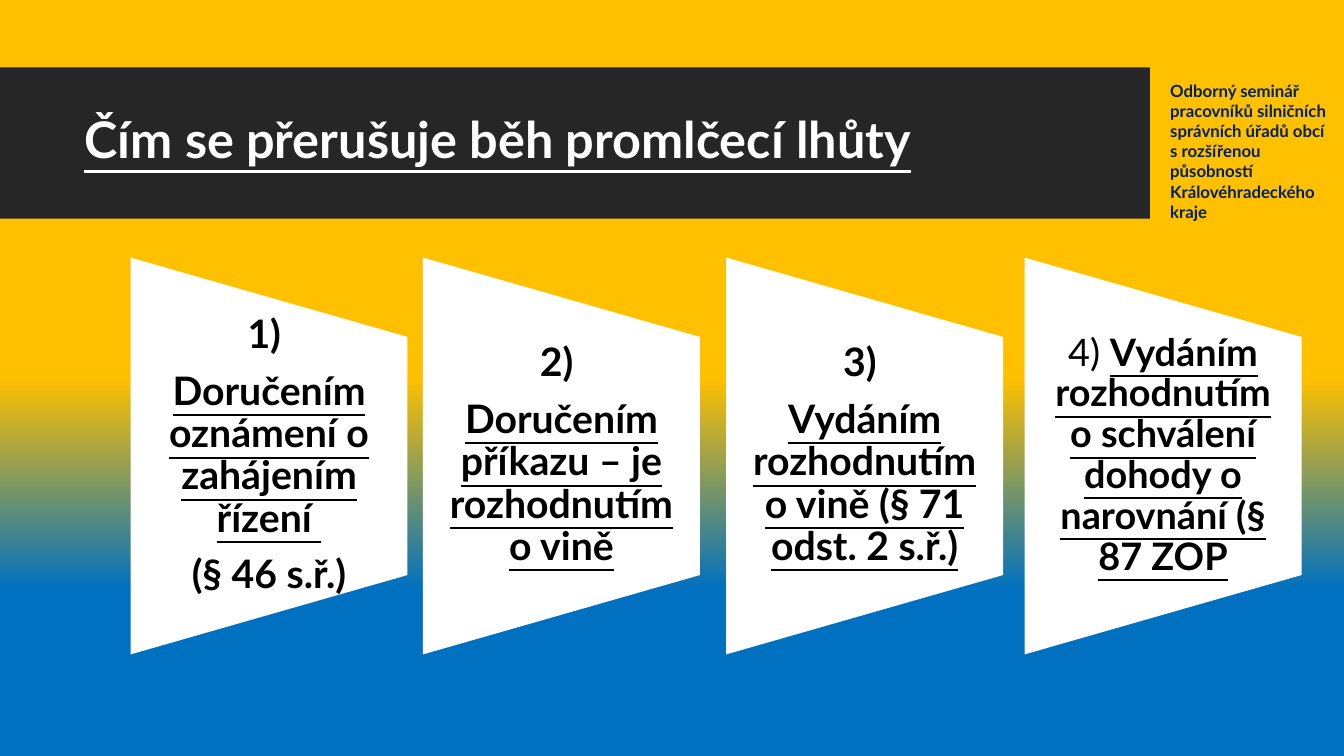
from dataclasses import dataclass

from pptx import Presentation
from pptx import util as u
from pptx.dml.color import RGBColor
from pptx.enum import shapes, text

HUES = {"gold": "FFC000", "blue": "0070C0", "dark": "262626",
        "white": "FFFFFF", "black": "000000", "navy": "002060"}
FACE = "Lato"
MID = 11.49
LONG, WIDE, TALL = 10.0, 6.98, 6.0


@dataclass
class Part:
    text: str
    bold: bool = True
    under: bool = False


@dataclass
class Card:
    mid: float
    size: int
    paras: list[list[Part]]


CARDS = [
    Card(6.78, 28, [[Part("1) ")],
                    [Part("Doručením oznámení o zahájením řízení ", under=True)],
                    [Part("(§ 46 s.ř.)")]]),
    Card(14.15, 28, [[Part("2) ")],
                     [Part("Doručením příkazu – je rozhodnutím o vině", under=True)]]),
    Card(21.79, 28, [[Part("3) ")],
                     [Part("Vydáním rozhodnutím o vině (§ 71 odst. 2 s.ř.)", under=True)]]),
    Card(29.31, 27, [[Part("4) ", bold=False),
                      Part("Vydáním rozhodnutím o schválení dohody o narovnání (§ 87 ZOP",
                           under=True)]]),
]


def tint(name: str) -> RGBColor:
    return RGBColor.from_string(HUES[name])


def style(font, size: int, hue: str, part: Part) -> None:
    font.name = FACE
    font.size = u.Pt(size)
    font.color.rgb = tint(hue)
    font.bold = part.bold
    font.underline = part.under


def block(slide, kind, x: float, y: float, w: float, h: float, hue: str):
    shape = slide.shapes.add_shape(kind, u.Cm(x), u.Cm(y), u.Cm(w), u.Cm(h))
    shape.shadow.inherit = False
    shape.fill.solid()
    shape.fill.fore_color.rgb = tint(hue)
    shape.line.fill.background()
    return shape


def label(slide, x: float, y: float, w: float, h: float):
    frame = slide.shapes.add_textbox(u.Cm(x), u.Cm(y), u.Cm(w), u.Cm(h)).text_frame
    frame.word_wrap = True
    frame.vertical_anchor = text.MSO_ANCHOR.MIDDLE
    return frame


def fill_para(para, parts: list[Part], size: int, hue: str) -> None:
    for part in parts:
        run = para.add_run()
        run.text = part.text
        if len(parts) > 1:
            style(run.font, size, hue, part)
    if len(parts) == 1:
        style(para.font, size, hue, parts[0])


def draw_card(slide, card: Card) -> None:
    shape = block(slide, shapes.MSO_SHAPE.FLOWCHART_MANUAL_OPERATION,
                  card.mid - LONG / 2, MID - WIDE / 2, LONG, WIDE, "white")
    shape.rotation = 270
    frame = label(slide, card.mid - WIDE / 2, MID - TALL / 2, WIDE, TALL)
    frame.margin_left = frame.margin_right = u.Cm(0.48)
    frame.margin_top = frame.margin_bottom = 0
    for i, parts in enumerate(card.paras):
        para = frame.add_paragraph() if i else frame.paragraphs[0]
        para.alignment = text.PP_ALIGN.CENTER
        para.line_spacing = 0.9
        para.space_after = u.Pt(10)
        fill_para(para, parts, card.size, "black")


def draw_back(slide) -> None:
    fill = slide.background.fill
    fill.gradient()
    fill.gradient_angle = 270
    for stop, (spot, hue) in zip(fill.gradient_stops, [(0.5, "gold"), (0.78, "blue")]):
        stop.position = spot
        stop.color.rgb = tint(hue)


def draw_head(slide) -> None:
    block(slide, shapes.MSO_SHAPE.RECTANGLE, 0, 1.7, 28.98, 3.81, "dark")
    para = label(slide, 1.88, 2.08, 26.7, 3).paragraphs[0]
    para.line_spacing = 0.9
    fill_para(para, [Part("Čím se přerušuje běh promlčecí lhůty", under=True)], 36, "white")


def draw_side(slide) -> None:
    frame = block(slide, shapes.MSO_SHAPE.RECTANGLE,
                  29.24, 1.14, 4.63, 5.13, "gold").text_frame
    frame.word_wrap = True
    frame.vertical_anchor = text.MSO_ANCHOR.TOP
    frame.margin_top = u.Cm(0.89)
    para = frame.paragraphs[0]
    para.alignment = text.PP_ALIGN.LEFT
    note = ("Odborný seminář pracovníků silničních správních úřadů obcí "
            "s rozšířenou působností Královéhradeckého kraje")
    fill_para(para, [Part(note)], 12, "navy")


def main() -> None:
    deck = Presentation()
    deck.slide_width, deck.slide_height = u.Cm(33.87), u.Cm(19.05)
    slide = deck.slides.add_slide(deck.slide_layouts[6])
    draw_back(slide)
    draw_head(slide)
    for card in CARDS:
        draw_card(slide, card)
    draw_side(slide)
    deck.save("out.pptx")


if __name__ == "__main__":
    main()
